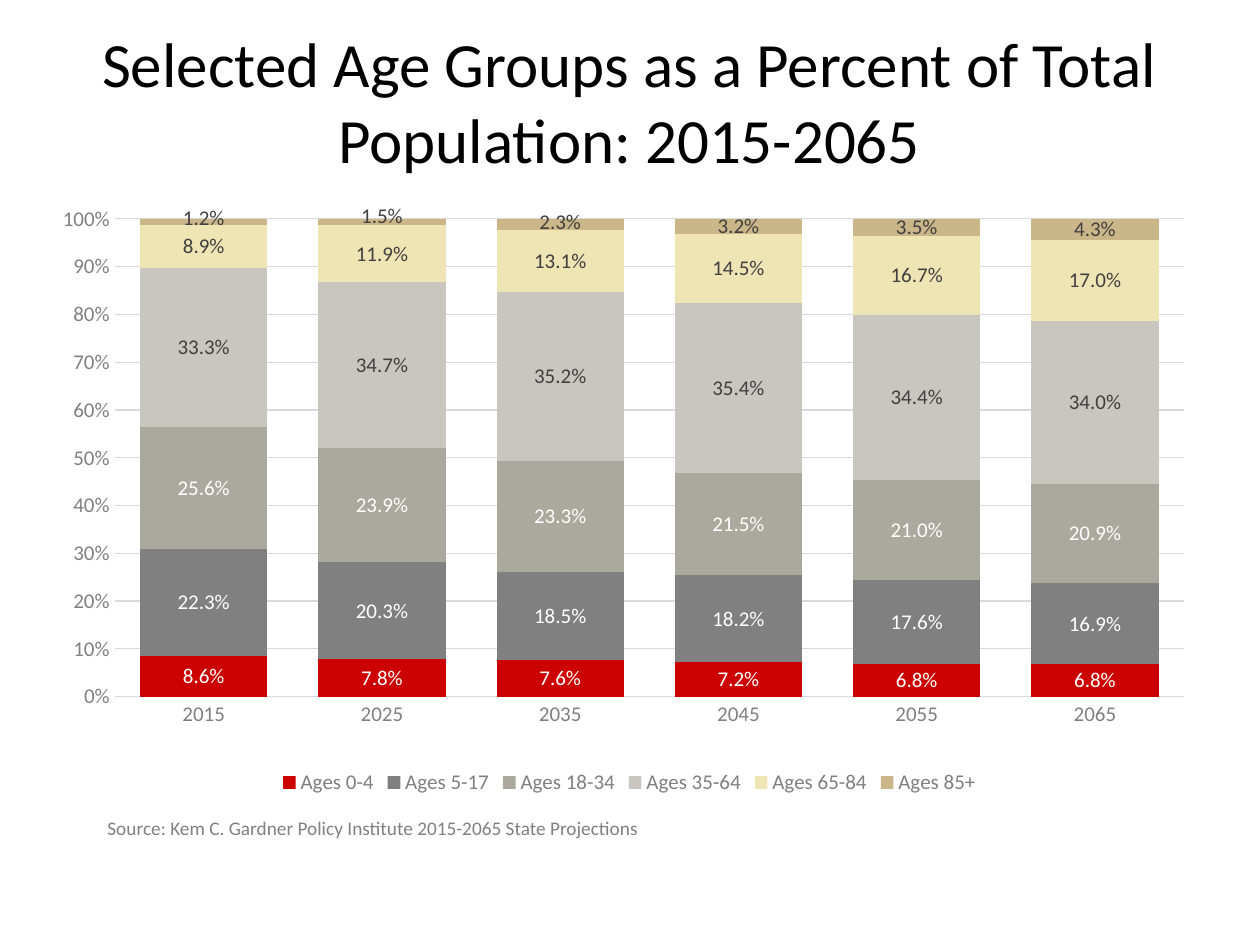
import copy
from dataclasses import dataclass

import pptx
import pptx.chart.data
import pptx.dml.color
import pptx.enum.chart
import pptx.enum.text
import pptx.oxml
import pptx.oxml.ns
import pptx.util

Inches = pptx.util.Inches
Pt = pptx.util.Pt
RGB = pptx.dml.color.RGBColor.from_string


@dataclass(frozen=True)
class Theme:
    font: str = "Calibri"
    title: str = "000000"
    muted: str = "808080"
    grid: str = "D9D9D9"
    light_label: str = "FFFFFF"
    dark_label: str = "404040"
    title_size: int = 36
    chart_size: int = 12
    source_size: int = 11


theme = Theme()


def style_font(font, size, color):
    font.name = theme.font
    font.size = Pt(size)
    font.bold = False
    font.color.rgb = RGB(color)


def write_text(frame, text, *, size, color, wrap=True,
               anchor=pptx.enum.text.MSO_ANCHOR.TOP):
    frame.word_wrap = wrap
    frame.vertical_anchor = anchor
    paragraph = frame.paragraphs[0]
    paragraph.alignment = pptx.enum.text.PP_ALIGN.CENTER
    run = paragraph.add_run()
    run.text = text
    style_font(run.font, size, color)


deck = pptx.Presentation()
deck.slide_width, deck.slide_height = Inches(10), Inches(7.5)
slide = deck.slides.add_slide(deck.slide_layouts[5])

# Title
title = slide.shapes.title
title.left, title.top = Inches(0.3), Inches(0.14)
title.width, title.height = Inches(9.39), Inches(1.31)
write_text(title.text_frame,
           "Selected Age Groups as a Percent of Total Population: 2015-2065",
           size=theme.title_size, color=theme.title,
           anchor=pptx.enum.text.MSO_ANCHOR.MIDDLE)

# Age shares: name, fill, label colour, share in each year
age_groups = [
    ("Ages 0-4", "CC0000", theme.light_label,
     [0.086, 0.078, 0.076, 0.072, 0.068, 0.068]),
    ("Ages 5-17", "808080", theme.light_label,
     [0.223, 0.203, 0.185, 0.182, 0.176, 0.169]),
    ("Ages 18-34", "ABA89E", theme.light_label,
     [0.256, 0.239, 0.233, 0.215, 0.21, 0.209]),
    ("Ages 35-64", "C8C6BF", theme.dark_label,
     [0.333, 0.347, 0.352, 0.354, 0.344, 0.34]),
    ("Ages 65-84", "EFE4B3", theme.dark_label,
     [0.089, 0.119, 0.131, 0.145, 0.167, 0.17]),
    ("Ages 85+", "CAB688", theme.dark_label,
     [0.012, 0.015, 0.023, 0.032, 0.035, 0.043]),
]
shares = pptx.chart.data.CategoryChartData(number_format="0.0%")
shares.categories = [str(year) for year in range(2015, 2066, 10)]
for name, _, _, values in age_groups:
    shares.add_series(name, values)

chart = slide.shapes.add_chart(
    pptx.enum.chart.XL_CHART_TYPE.COLUMN_STACKED,
    Inches(0.3), Inches(1.53), Inches(9.39), Inches(4.82), shares).chart
chart.has_title = False
style_font(chart.font, theme.chart_size, theme.muted)
chart.has_legend = True
chart.legend.position = pptx.enum.chart.XL_LEGEND_POSITION.BOTTOM
chart.legend.include_in_layout = False
style_font(chart.legend.font, theme.chart_size, theme.muted)

years, percents = chart.category_axis, chart.value_axis
for axis in (years, percents):
    axis.major_tick_mark = pptx.enum.chart.XL_TICK_MARK.NONE
    axis.minor_tick_mark = pptx.enum.chart.XL_TICK_MARK.NONE
    style_font(axis.tick_labels.font, theme.chart_size, theme.muted)
percents.minimum_scale, percents.maximum_scale = 0, 1
percents.major_unit = 0.1
percents.tick_labels.number_format = "0%"
percents.tick_labels.number_format_is_linked = False
percents.format.line.fill.background()
percents.has_major_gridlines = True
for line in (years.format.line, percents.major_gridlines.format.line):
    line.color.rgb = RGB(theme.grid)
    line.width = Pt(0.75)

columns = chart.plots[0]
columns.gap_width, columns.overlap = 40, 100
columns.vary_by_categories = False
for series, (_, fill, label_color, _) in zip(columns.series, age_groups):
    series.format.fill.solid()
    series.format.fill.fore_color.rgb = RGB(fill)
    labels = series.data_labels
    labels.show_value = True
    labels.number_format = "0.0%"
    labels.number_format_is_linked = False
    style_font(labels.font, theme.chart_size, label_color)

namespace = pptx.oxml.ns.nsdecls("c")

# Fixed inner plot area
plot_area = chart.element.xpath("c:chart/c:plotArea")[0]
for layout in plot_area.xpath("c:layout"):
    plot_area.remove(layout)
plot_area.insert(0, pptx.oxml.parse_xml(
    f'<c:layout {namespace}><c:manualLayout><c:layoutTarget val="inner"/>'
    '<c:xMode val="edge"/><c:yMode val="edge"/>'
    '<c:x val="0.065"/><c:y val="0.043"/><c:w val="0.904"/><c:h val="0.787"/>'
    '</c:manualLayout></c:layout>'))

# Lift the first labels of the thin top segments
top_labels = chart.element.xpath(".//c:ser[last()]/c:dLbls")[0]
shared_format = [part for part in top_labels
                 if part.tag != pptx.oxml.ns.qn("c:showLeaderLines")]
for index, lift in enumerate((0.007, 0.009, 0.004)):
    label = pptx.oxml.parse_xml(
        f'<c:dLbl {namespace}><c:idx val="{index}"/><c:layout><c:manualLayout>'
        f'<c:x val="0"/><c:y val="{-lift}"/>'
        '</c:manualLayout></c:layout></c:dLbl>')
    label.extend(copy.deepcopy(part) for part in shared_format)
    top_labels.insert(index, label)

# Source line
source = slide.shapes.add_textbox(Inches(0.7), Inches(6.43),
                                  Inches(4.52), Inches(0.29))
write_text(source.text_frame,
           "Source: Kem C. Gardner Policy Institute 2015-2065 State Projections",
           size=theme.source_size, color=theme.muted, wrap=False)

deck.save("out.pptx")
